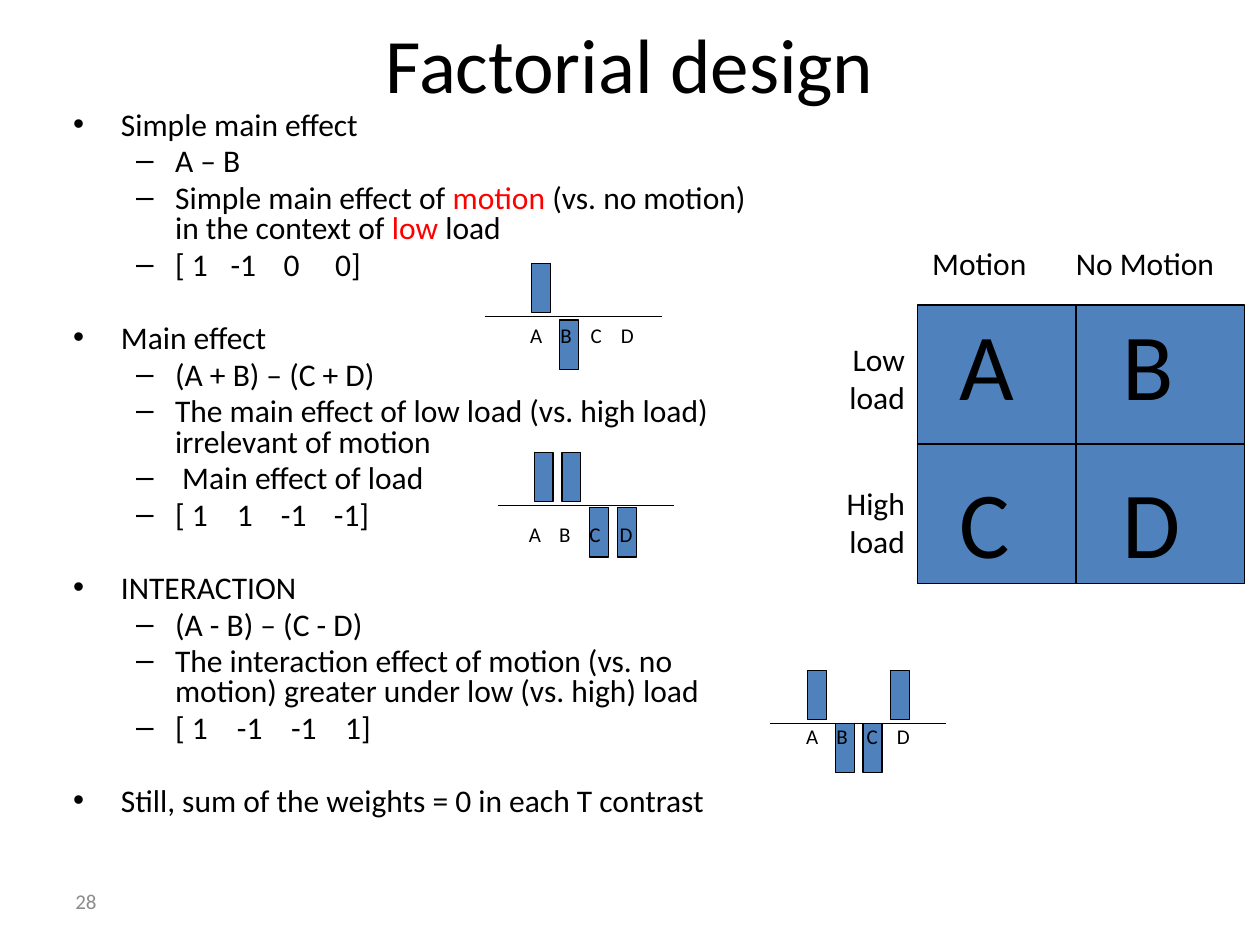
from lxml import etree
from pptx import Presentation
from pptx import util as u
from pptx.dml.color import RGBColor
from pptx.enum import shapes, text
from pptx.oxml import ns

BLACK = RGBColor(0, 0, 0)
RED = RGBColor(0xFF, 0, 0)
BLUE = RGBColor(0x4F, 0x81, 0xBD)
GRAY = RGBColor(0x8C, 0x8C, 0x8C)
FONT = "Calibri"

TITLE = "Factorial design"
OUTLINE = [
    ("Simple main effect", [
        ["A – B"],
        ["Simple main effect of ", ("motion", RED), " (vs. no motion) in the context of ",
         ("low", RED), " load"],
        ["[ 1\t-1\t0\t0]"],
    ], [1.25, 1.67, 2.08]),
    ("Main effect", [
        ["(A + B) – (C + D)"],
        ["The main effect of low load (vs. high load) irrelevant of motion"],
        [" Main effect of load"],
        ["[ 1\t1\t-1\t-1]"],
    ], [1.30, 1.65, 2.07]),
    ("INTERACTION", [
        ["(A - B) – (C - D)"],
        ["The interaction effect of motion (vs. no motion) greater under low (vs. high) load"],
        ["[ 1\t-1\t-1\t1]"],
    ], [1.30, 1.73, 2.16]),
    ("Still, sum of the weights = 0 in each T contrast", [], []),
]
CONTRASTS = [
    dict(weights=[1, -1, 0, 0], axis=(3.85, 2.51), bars=4.22, drop=0.03, labels=(4.11, 2.51)),
    dict(weights=[1, 1, -1, -1], axis=(3.95, 4.01), bars=4.24, drop=0.02, labels=(4.10, 4.09)),
    dict(weights=[1, -1, -1, 1], axis=(6.11, 5.74), bars=6.41, drop=0, labels=(6.30, 5.69)),
]
BAR_WIDTH, BAR_HEIGHT, BAR_STEP, BAR_RISE = 0.15, 0.39, 0.22, 0.42
AXIS_LENGTH = 1.4
LABEL_STEPS = [0.24, 0.48, 0.72]
GRID_LEFT, GRID_TOP, GRID_WIDTH, GRID_HEIGHT = 7.28, 2.42, 2.6, 2.21
GRID_COLUMN = 8.54


def place(shape, *box):
    shape.left, shape.top, shape.width, shape.height = map(u.Inches, box)


def add_run(paragraph, words, size, color=BLACK):
    run = paragraph.add_run()
    run.text = words
    run.font.name, run.font.size = FONT, u.Pt(size)
    run.font.color.rgb = color


def set_tabs(paragraph, positions):
    tabs = etree.SubElement(paragraph._p.get_or_add_pPr(), ns.qn("a:tabLst"))
    for position in positions:
        etree.SubElement(tabs, ns.qn("a:tab"), pos=str(u.Inches(position)), algn="l")


def add_text(slide, box, lines, size, color=BLACK, tabs=(), before=0,
             align=text.PP_ALIGN.LEFT, anchor=text.MSO_ANCHOR.TOP):
    frame = slide.shapes.add_textbox(*map(u.Inches, box)).text_frame
    frame.word_wrap = True
    frame.vertical_anchor = anchor
    for index, line in enumerate(lines):
        paragraph = frame.add_paragraph() if index else frame.paragraphs[0]
        paragraph.alignment = align
        paragraph.space_before = u.Pt(before if index else 0)
        if tabs:
            set_tabs(paragraph, tabs)
        add_run(paragraph, line, size, color)


def add_box(slide, *box):
    shape = slide.shapes.add_shape(shapes.MSO_SHAPE.RECTANGLE, *map(u.Inches, box))
    shape.shadow.inherit = False
    shape.fill.solid()
    shape.fill.fore_color.rgb = BLUE
    shape.line.color.rgb, shape.line.width = BLACK, u.Pt(0.75)
    return shape


def add_line(slide, *ends):
    line = slide.shapes.add_connector(shapes.MSO_CONNECTOR.STRAIGHT, *map(u.Inches, ends))
    line.line.color.rgb, line.line.width = BLACK, u.Pt(0.75)
    etree.SubElement(line._element.spPr, ns.qn("a:effectLst"))
    return line


def add_outline(body):
    place(body, 0.48, 0.84, 5.61, 6.46)
    frame = body.text_frame
    frame.auto_size = text.MSO_AUTO_SIZE.NONE
    rows = []
    for heading, items, tabs in OUTLINE:
        rows.append((0, [heading], ()))
        rows += [(1, item, tabs if "\t" in item[0] else ()) for item in items]
    for index, (level, parts, tabs) in enumerate(rows):
        paragraph = frame.add_paragraph() if index else frame.paragraphs[0]
        paragraph.level = level
        paragraph.line_spacing = 0.8
        paragraph.space_before = u.Pt(24.6 if index and level == 0 else 3.6)
        properties = paragraph._p.get_or_add_pPr()
        left, hanging = [(0.38, 0.38), (0.81, 0.31)][level]
        properties.set("marL", str(u.Inches(left)))
        properties.set("indent", str(-u.Inches(hanging)))
        if tabs:
            set_tabs(paragraph, tabs)
        for part in parts:
            words, color = (part, BLACK) if isinstance(part, str) else part
            add_run(paragraph, words, 18, color)


def add_design_grid(slide):
    grid = add_box(slide, GRID_LEFT, GRID_TOP, GRID_WIDTH, GRID_HEIGHT)
    add_line(slide, GRID_COLUMN, GRID_TOP, GRID_COLUMN, GRID_TOP + GRID_HEIGHT)
    middle = GRID_TOP + GRID_HEIGHT / 2
    row_line = add_line(slide, GRID_LEFT, middle, GRID_LEFT + GRID_WIDTH, middle)
    row_line.begin_connect(grid, 1)
    row_line.end_connect(grid, 3)
    add_text(slide, (7.52, 2.38, 2.4, 2.37), ["A\tB", "C\tD"], 54, tabs=[1.29], before=25.5)
    add_text(slide, (7.3, 1.89, 2.6, 0.4), ["Motion\tNo Motion"], 18, tabs=[1.14])
    add_text(slide, (6.18, 2.65, 1.1, 1.92), ["Low load", "High load"], 18,
             before=39, align=text.PP_ALIGN.RIGHT)


def add_contrast(slide, weights, axis, bars, drop, labels):
    axis_left, axis_top = axis
    for index, weight in enumerate(weights):
        if weight:
            top = axis_top - BAR_RISE if weight > 0 else axis_top + drop
            add_box(slide, bars + index * BAR_STEP, top, BAR_WIDTH, BAR_HEIGHT)
    add_line(slide, axis_left, axis_top, axis_left + AXIS_LENGTH, axis_top)
    add_text(slide, (*labels, 1.37, 0.3), ["A\tB\tC\tD"], 12, tabs=LABEL_STEPS)


def main():
    presentation = Presentation()
    presentation.slide_width, presentation.slide_height = u.Inches(10), u.Inches(7.5)
    slide = presentation.slides.add_slide(presentation.slide_layouts[1])
    title, body = slide.placeholders
    place(title, 0.75, 0, 8.5, 0.99)
    add_run(title.text_frame.paragraphs[0], TITLE, 44)
    add_outline(body)
    add_design_grid(slide)
    for contrast in CONTRASTS:
        add_contrast(slide, **contrast)
    add_text(slide, (0.5, 6.95, 2.33, 0.4), ["28"], 12, GRAY, anchor=text.MSO_ANCHOR.MIDDLE)
    presentation.save("out.pptx")


if __name__ == "__main__":
    main()
